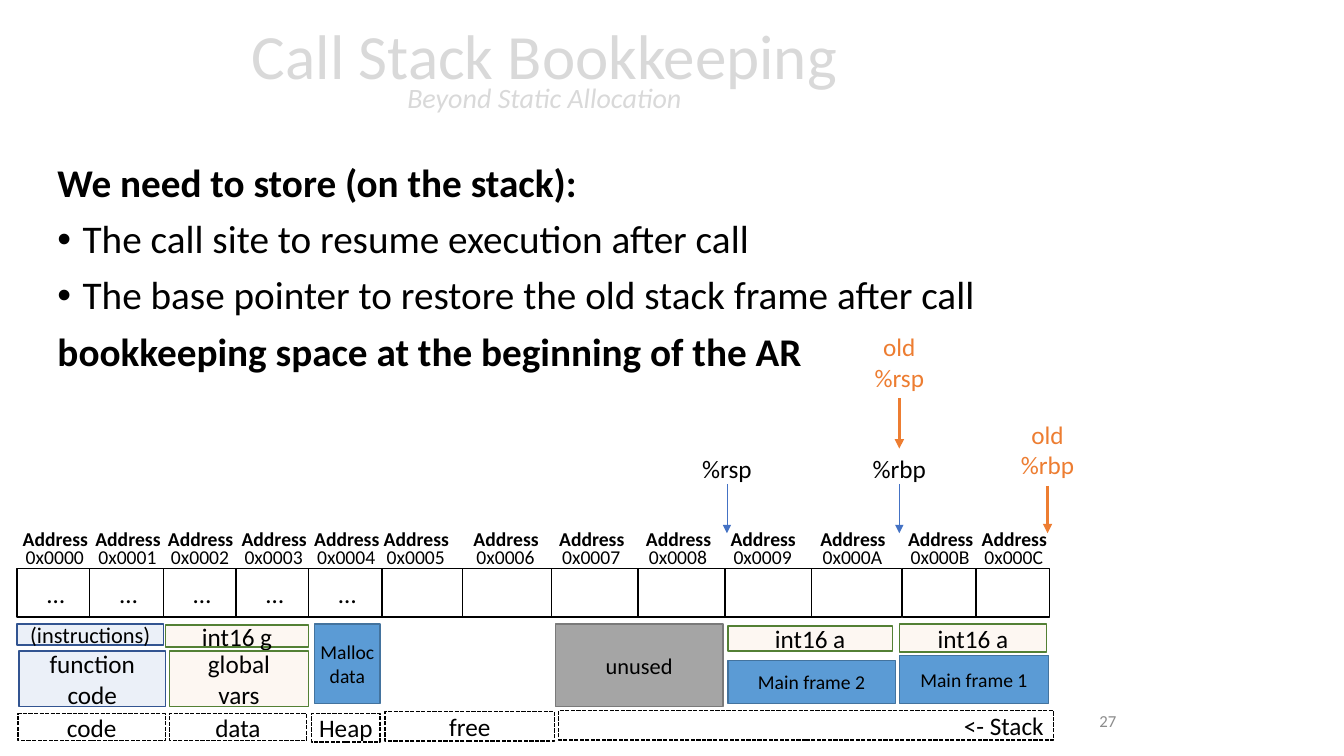
from lxml import etree
from pptx import Presentation
from pptx.dml.color import RGBColor
from pptx.enum.dml import MSO_LINE
from pptx.enum.shapes import MSO_CONNECTOR, MSO_SHAPE
from pptx.enum.text import MSO_ANCHOR, MSO_AUTO_SIZE, PP_ALIGN
from pptx.oxml.ns import qn
from pptx.util import Inches, Pt

RECTANGLE = MSO_SHAPE.RECTANGLE
STRAIGHT = MSO_CONNECTOR.STRAIGHT
DASHED = MSO_LINE.SQUARE_DOT
LEFT, CENTER, RIGHT = PP_ALIGN.LEFT, PP_ALIGN.CENTER, PP_ALIGN.RIGHT
TOP, MIDDLE = MSO_ANCHOR.TOP, MSO_ANCHOR.MIDDLE
TOP_SIDE, BOTTOM_SIDE = 0, 2

FONT = "Calibri"
COLORS = {
    "text": "000000", "cell": "FFFFFF", "title": "D9D9D9", "number": "8C8C8C",
    "code": "4472C4", "code_line": "325491",
    "variable": "F4B183", "variable_line": "538035",
    "frame": "5B9BD5", "frame_line": "43739E",
    "unused": "A5A5A5", "unused_line": "7A7A7A",
    "pointer": "4472C4", "old": "ED7D31",
}
TINTED = ("code", "variable")

# Cell left, cell width, label left, all from the left end of memory
CELLS = [
    (0, 0.73, -0.01), (0.72, 0.73, 0.71), (1.45, 0.73, 1.43),
    (2.17, 0.73, 2.16), (2.89, 0.73, 2.88), (3.62, 0.93, 3.57),
    (4.42, 0.93, 4.46), (5.3, 0.93, 5.31), (6.16, 0.93, 6.17),
    (7.02, 0.93, 7.01), (7.88, 0.89, 7.9), (8.78, 0.73, 8.77),
    (9.51, 0.73, 9.5),
]
USED_CELLS = 5

# Text, left, top, width, height, kind, size, side inset
CONTENTS = [
    ("(instructions)", 0, 0, 1.45, 0.21, "code", 16, 0.1),
    ("function\ncode", 0.02, 0.27, 1.45, 0.55, "code", 18, 0.1),
    ("int16 g", 1.47, 0.01, 1.42, 0.22, "variable", 18, 0.1),
    ("global\nvars", 1.51, 0.27, 1.38, 0.55, "variable", 18, 0.1),
    ("Malloc\ndata", 2.95, 0, 0.65, 0.79, "frame", 14, 0),
    ("unused", 5.34, 0, 1.66, 0.82, "unused", 16, 0.1),
    ("int16 a", 7.05, 0.02, 1.63, 0.25, "variable", 18, 0.1),
    ("Main frame 2", 7.05, 0.36, 1.66, 0.43, "frame", 14, 0.1),
    ("int16 a", 8.75, 0, 1.46, 0.28, "variable", 18, 0.1),
    ("Main frame 1", 8.75, 0.31, 1.48, 0.48, "frame", 14, 0.1),
]

# Text, left, top, width, height, alignment, side inset
SEGMENTS = [
    ("code", 0.01, 0.03, 1.46, 0.27, CENTER, 0.1),
    ("data", 1.51, 0.03, 1.36, 0.27, CENTER, 0.1),
    ("Heap", 2.92, 0.03, 0.68, 0.28, CENTER, 0),
    ("free", 3.65, 0.01, 1.68, 0.29, CENTER, 0.1),
    ("<- Stack", 5.37, 0, 4.91, 0.29, RIGHT, 0.1),
]


def color(name):
    return RGBColor.from_string(COLORS[name])


def style(paragraph, size, color_name="text", align=LEFT, bold=False):
    paragraph.alignment = align
    font = paragraph.font
    font.name, font.size, font.bold = FONT, Pt(size), bold
    font.color.rgb = color(color_name)


def write(shape, text, size, color_name="text", align=CENTER, bold=False,
          anchor=MIDDLE, inset=0.1, wrap=True):
    frame = shape.text_frame
    frame.text = text
    frame.word_wrap = wrap
    frame.vertical_anchor = anchor
    frame.margin_left = frame.margin_right = Inches(inset)
    for paragraph in frame.paragraphs:
        style(paragraph, size, color_name, align, bold)


def add_label(slide, box, text, size, **options):
    label = slide.shapes.add_textbox(*map(Inches, box))
    write(label, text, size, **options)
    return label


def add_box(slide, box, fill=None, line="text"):
    shape = slide.shapes.add_shape(RECTANGLE, *map(Inches, box))
    shape.shadow.inherit = False
    if fill:
        shape.fill.solid()
        shape.fill.fore_color.rgb = color(fill)
    else:
        shape.fill.background()
    if fill in TINTED:
        tint = shape.fill._xPr.find(".//" + qn("a:srgbClr"))
        etree.SubElement(tint, qn("a:alpha"), val="10000")
    shape.line.color.rgb = color(line)
    shape.line.width = Pt(1)
    return shape


def place(placeholder, box):
    (placeholder.left, placeholder.top,
     placeholder.width, placeholder.height) = map(Inches, box)
    placeholder.text_frame.auto_size = MSO_AUTO_SIZE.NONE
    placeholder.text_frame.word_wrap = True


def fill_title(title, box):
    place(title, box)
    title.text_frame.vertical_anchor = MIDDLE
    heading = title.text_frame.paragraphs[0]
    style(heading, 45, "title", CENTER)
    heading.line_spacing = 0.7
    heading.add_run().text = "Call Stack Bookkeeping"
    heading.add_line_break()
    subtitle = heading.add_run()
    subtitle.text = "Beyond Static Allocation"
    subtitle.font.size = Pt(20)
    subtitle.font.italic = True


def fill_body(body, box):
    place(body, box)
    lines = [
        ("We need to store (on the stack):", False),
        ("The call site to resume execution after call", True),
        ("The base pointer to restore the old stack frame after call", True),
        ("bookkeeping space at the beginning of the AR", False),
    ]
    body.text_frame.text = "\n".join(text for text, _ in lines)
    for paragraph, (_, bulleted) in zip(body.text_frame.paragraphs, lines):
        style(paragraph, 28, bold=not bulleted)
        paragraph.line_spacing = 0.9
        paragraph.space_before = Pt(10)
        properties = paragraph._p.get_or_add_pPr()
        indent = Inches(0.25) if bulleted else 0
        properties.set("marL", str(indent))
        properties.set("indent", str(-indent))
        # Bullet elements must precede the default run properties
        bullet = etree.Element(qn("a:buChar" if bulleted else "a:buNone"))
        if bulleted:
            bullet.set("char", "•")
        properties.find(qn("a:defRPr")).addprevious(bullet)


def add_memory(slide, left, top):
    """Draw the row of cells with its top at the given height, addresses above."""
    for address, (cell_left, width, label_left) in enumerate(CELLS):
        add_box(slide, (left + cell_left, top, width, 0.48), "cell")
        label_x = left + label_left
        add_label(slide, (label_x, top - 0.46, 0.78, 0.34), "Address", 14,
                  bold=True, anchor=TOP, inset=0)
        add_label(slide, (label_x + 0.07, top - 0.28, 0.63, 0.35),
                  f"0x{address:04X}", 14, anchor=TOP, inset=0)
        if address < USED_CELLS:
            add_label(slide, (left + cell_left + 0.2, top + 0.05, 0.38, 0.4),
                      "…", 18, align=LEFT, anchor=TOP, wrap=False)


def add_contents(slide, left, top):
    for text, x, y, width, height, kind, size, inset in CONTENTS:
        content = add_box(slide, (left + x, top + y, width, height),
                          kind, kind + "_line")
        write(content, text, size, inset=inset)


def add_segments(slide, left, top):
    for text, x, y, width, height, align, inset in SEGMENTS:
        segment = add_box(slide, (left + x, top + y, width, height))
        segment.line.dash_style = DASHED
        write(segment, text, 18, align=align, inset=inset)


def add_pointer(slide, text, box, tip, color_name, weight, target=None):
    """Add a register label whose arrow drops to a height or onto a label."""
    left, top, width, height = box
    old = color_name == "old"
    label = add_label(slide, box, text, 18, anchor=TOP, wrap=False,
                      color_name="old" if old else "text")
    x = Inches(left + width / 2)
    arrow = slide.shapes.add_connector(STRAIGHT, x, Inches(top + height),
                                       x, Inches(tip))
    arrow.begin_connect(label, BOTTOM_SIDE)
    if target is not None:
        arrow.end_connect(target, TOP_SIDE)
    arrow.line.color.rgb = color(color_name)
    arrow.line.width = Pt(weight)
    etree.SubElement(arrow.line._get_or_add_ln(), qn("a:tailEnd"), type="triangle")
    etree.SubElement(arrow._element.spPr, qn("a:effectLst"))
    return label


def add_pointers(slide, tip):
    """Place the registers above the height their arrows point at."""
    add_pointer(slide, "%rsp", (6.86, tip - 0.84, 0.7, 0.35), tip, "pointer", 0.5)
    base = add_pointer(slide, "%rbp", (8.55, tip - 0.84, 0.74, 0.35),
                       tip, "pointer", 0.5)
    add_pointer(slide, "old\n%rbp", (10.02, tip - 1.18, 0.74, 0.71),
                tip, "old", 2.25)
    add_pointer(slide, "old\n%rsp", (8.57, tip - 2.05, 0.7, 0.71),
                tip - 0.84, "old", 2.25, base)


def main():
    deck = Presentation()
    deck.slide_width, deck.slide_height = Inches(13.33), Inches(7.5)
    slide = deck.slides.add_slide(deck.slide_layouts[1])
    fill_title(slide.shapes.title, (0, 0.02, 10.8, 1.45))
    fill_body(slide.placeholders[1], (0.47, 1.57, 9.76, 4.76))
    add_label(slide, (8.17, 6.95, 3, 0.4), "27", 12,
              color_name="number", align=RIGHT)
    add_memory(slide, 0.17, 5.64)
    add_contents(slide, 0.17, 6.19)
    add_segments(slide, 0.17, 7.05)
    add_pointers(slide, 5.29)
    deck.save("out.pptx")


if __name__ == "__main__":
    main()
